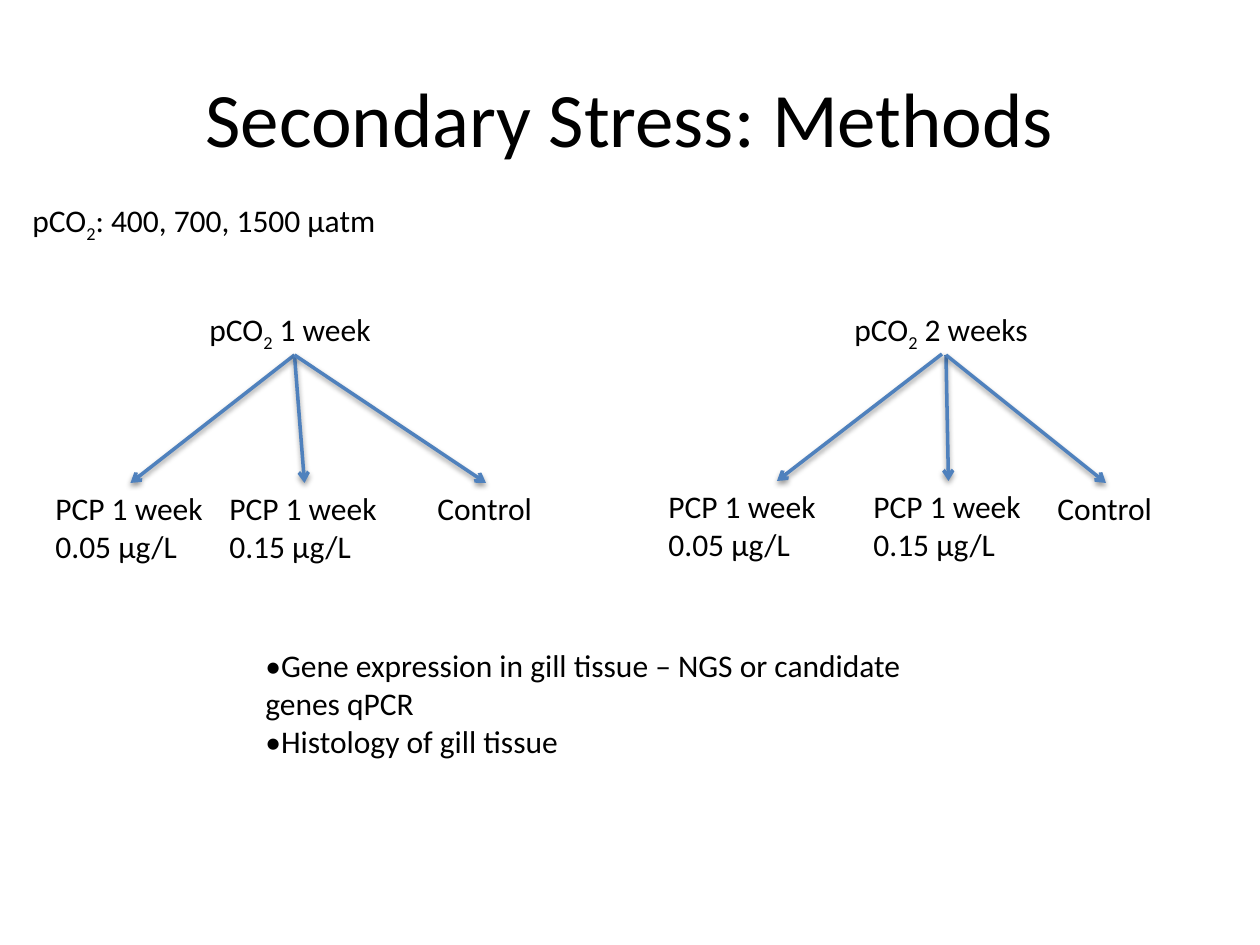
from pptx import Presentation
from pptx.dml.color import RGBColor
from pptx.enum.shapes import MSO_CONNECTOR
from pptx.enum.text import MSO_ANCHOR, MSO_AUTO_SIZE, PP_ALIGN
from pptx.oxml.ns import qn
from pptx.util import Inches, Pt
from lxml.etree import SubElement

PX = Inches(1) / 126
COLORS = {"text": "000000", "arrow": "4F81BD"}
FONT = "Calibri"
BOTTOM, TOP = 2, 0
LOW_DOSE = ["PCP 1 week", "0.05 µg/L"]
HIGH_DOSE = ["PCP 1 week", "0.15 µg/L"]
CONTROL = ["Control"]


def px(*lengths):
    return [round(length * PX) for length in lengths]


def add_runs(para, line):
    """Fill a paragraph, lowering every part that stands between underscores."""
    for index, part in enumerate(line.split("_")):
        span = para.add_run()
        span.text = part
        if index % 2:
            span._r.get_or_add_rPr().set("baseline", "-25000")


def add_text(page, place, lines, size=18, wrap=False):
    box = page.shapes.add_textbox(*px(*place))
    frame = box.text_frame
    frame.word_wrap = wrap
    frame.auto_size = MSO_AUTO_SIZE.SHAPE_TO_FIT_TEXT
    for index, line in enumerate(lines):
        para = frame.paragraphs[0] if index == 0 else frame.add_paragraph()
        add_runs(para, line)
        para.font.name = FONT
        para.font.size = Pt(size)
        para.font.color.rgb = RGBColor.from_string(COLORS["text"])
    return box


def add_title(page, text):
    frame = add_text(page, (63, 38, 1134, 158), [text], 44, wrap=True).text_frame
    frame.auto_size = MSO_AUTO_SIZE.NONE
    frame.vertical_anchor = MSO_ANCHOR.MIDDLE
    frame.paragraphs[0].alignment = PP_ALIGN.CENTER


def add_arrow(page, start=(0, 0), end=(0, 0)):
    """Draw an arrow that keeps the soft shadow of the theme."""
    arrow = page.shapes.add_connector(MSO_CONNECTOR.STRAIGHT, *px(*start, *end))
    arrow.line.color.rgb = RGBColor.from_string(COLORS["arrow"])
    arrow.line.width = Pt(2)
    SubElement(arrow.line._get_or_add_ln(), qn("a:tailEnd"), type="arrow")
    return arrow


def join(page, parent, child):
    arrow = add_arrow(page)
    arrow.begin_connect(parent, BOTTOM)
    arrow.end_connect(child, TOP)


def main():
    deck = Presentation()
    deck.slide_width, deck.slide_height = px(1260, 945)
    page = deck.slides.add_slide(deck.slide_layouts[6])

    add_title(page, "Secondary Stress: Methods")
    add_text(page, (20, 195, 379, 50), ["pCO_2_: 400, 700, 1500 µatm"])

    one_week = add_text(page, (197, 304, 195, 51), ["pCO_2_ 1 week"])
    two_weeks = add_text(page, (842, 304, 208, 51), ["pCO_2_ 2 weeks"])
    treatments = [
        (one_week, (43, 483, 175, 89), LOW_DOSE),
        (one_week, (217, 483, 175, 89), HIGH_DOSE),
        (one_week, (425, 483, 122, 50), CONTROL),
        (two_weeks, (861, 481, 175, 89), HIGH_DOSE),
        (two_weeks, (1045, 483, 122, 50), CONTROL),
    ]
    for parent, place, lines in treatments:
        join(page, parent, add_text(page, place, lines))

    # This arrow ends to the right of the middle of its label.
    add_text(page, (656, 481, 175, 89), LOW_DOSE)
    add_arrow(page, (942, 354), (777, 481))

    add_text(page, (253, 640, 694, 127), [
        "•Gene expression in gill tissue – NGS or candidate genes qPCR",
        "•Histology of gill tissue",
    ], wrap=True)
    deck.save("out.pptx")


if __name__ == "__main__":
    main()
